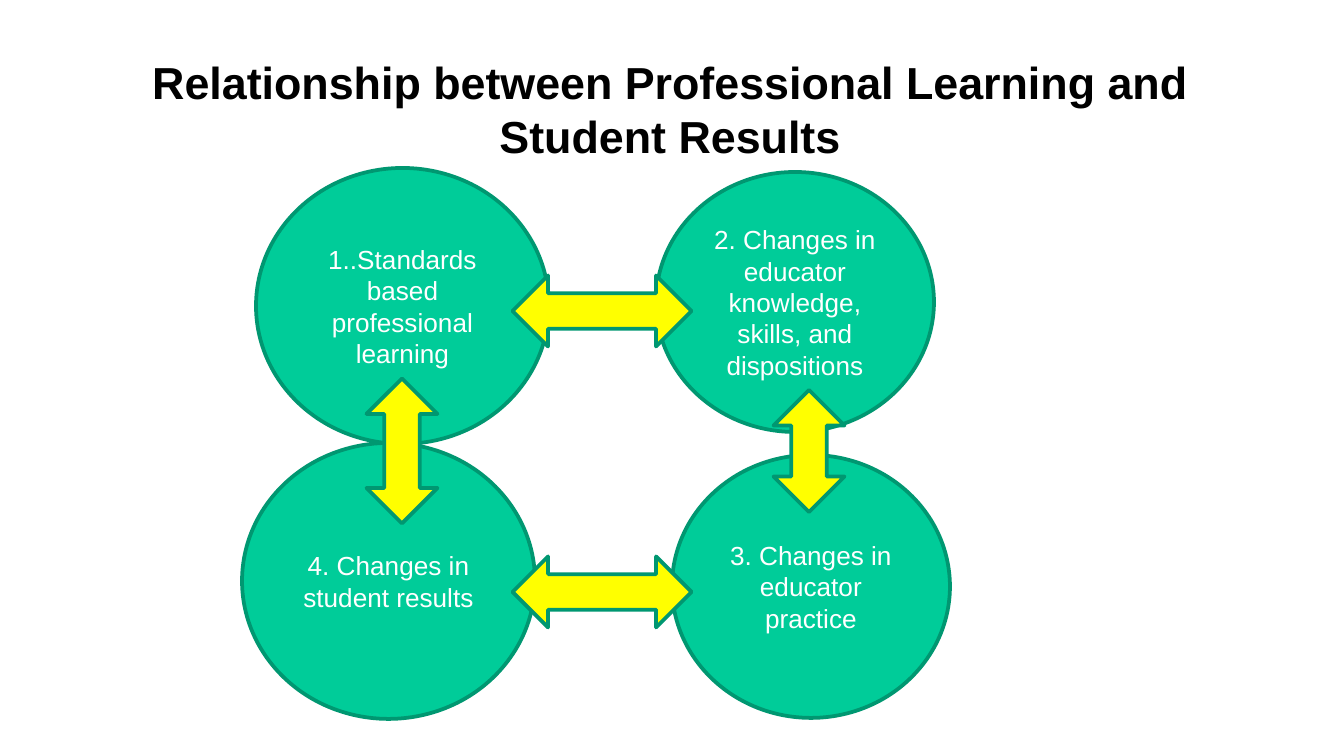
from pptx import Presentation
from pptx.dml.color import RGBColor
from pptx.enum.shapes import MSO_SHAPE as Shape
from pptx.enum.text import MSO_ANCHOR as Anchor, PP_ALIGN as Align
from pptx.util import Emu, Pt

PX = 914400 / 134.4
GREEN, DARK_GREEN, YELLOW = "00CC99", "009771", "FFFF00"

# Stages of the cycle: text, left, top, width, height
STAGES = [
    ("1..Standards based professional learning", 256, 168, 293, 276),
    ("2. Changes in educator knowledge, skills, and dispositions", 656, 172, 278, 260),
    ("4. Changes in student results", 242, 443, 293, 276),
    ("3. Changes in educator practice", 672, 455, 278, 263),
]

# Links between stages: centre x, centre y, length, rotation
LINKS = [
    (602, 311, 179, 0),
    (809, 451, 122, 90),
    (602, 592, 179, 0),
    (402, 451, 145, 90),
]
LINK_THICKNESS = 71


def px(*lengths):
    return [Emu(round(length * PX)) for length in lengths]


def color(value):
    return RGBColor.from_string(value)


def write(frame, text, size, ink, bold=False):
    frame.word_wrap = True
    para = frame.paragraphs[0]
    para.text = text
    para.alignment = Align.CENTER
    font = para.font
    font.name, font.size, font.bold = "Arial", Pt(size), bold
    font.color.rgb = color(ink)


def add_outlined(page, kind, bounds, fill):
    shape = page.shapes.add_shape(kind, *px(*bounds))
    shape.shadow.inherit = False
    shape.fill.solid()
    shape.fill.fore_color.rgb = color(fill)
    shape.line.color.rgb = color(DARK_GREEN)
    shape.line.width = Pt(2)
    return shape


def add_stage(page, text, *bounds):
    circle = add_outlined(page, Shape.FLOWCHART_CONNECTOR, bounds, GREEN)
    circle.text_frame.vertical_anchor = Anchor.MIDDLE
    write(circle.text_frame, text, 14, "FFFFFF")


def add_link(page, x, y, length, rotation):
    bounds = (x - length / 2, y - LINK_THICKNESS / 2, length, LINK_THICKNESS)
    arrow = add_outlined(page, Shape.LEFT_RIGHT_ARROW, bounds, YELLOW)
    arrow.rotation = rotation


def add_title(page, text, *bounds):
    box = page.shapes.add_textbox(*px(*bounds))
    write(box.text_frame, text, 24, "000000", bold=True)


def main():
    deck = Presentation()
    deck.slide_width, deck.slide_height = px(1344, 756)
    page = deck.slides.add_slide(deck.slide_layouts[6])

    # Circles, then the title, then the arrows on top
    for stage in STAGES:
        add_stage(page, *stage)
    add_title(page, "Relationship between Professional Learning and Student Results",
              76, 48, 1188, 122)
    for link in LINKS:
        add_link(page, *link)

    deck.save("out.pptx")


if __name__ == "__main__":
    main()
